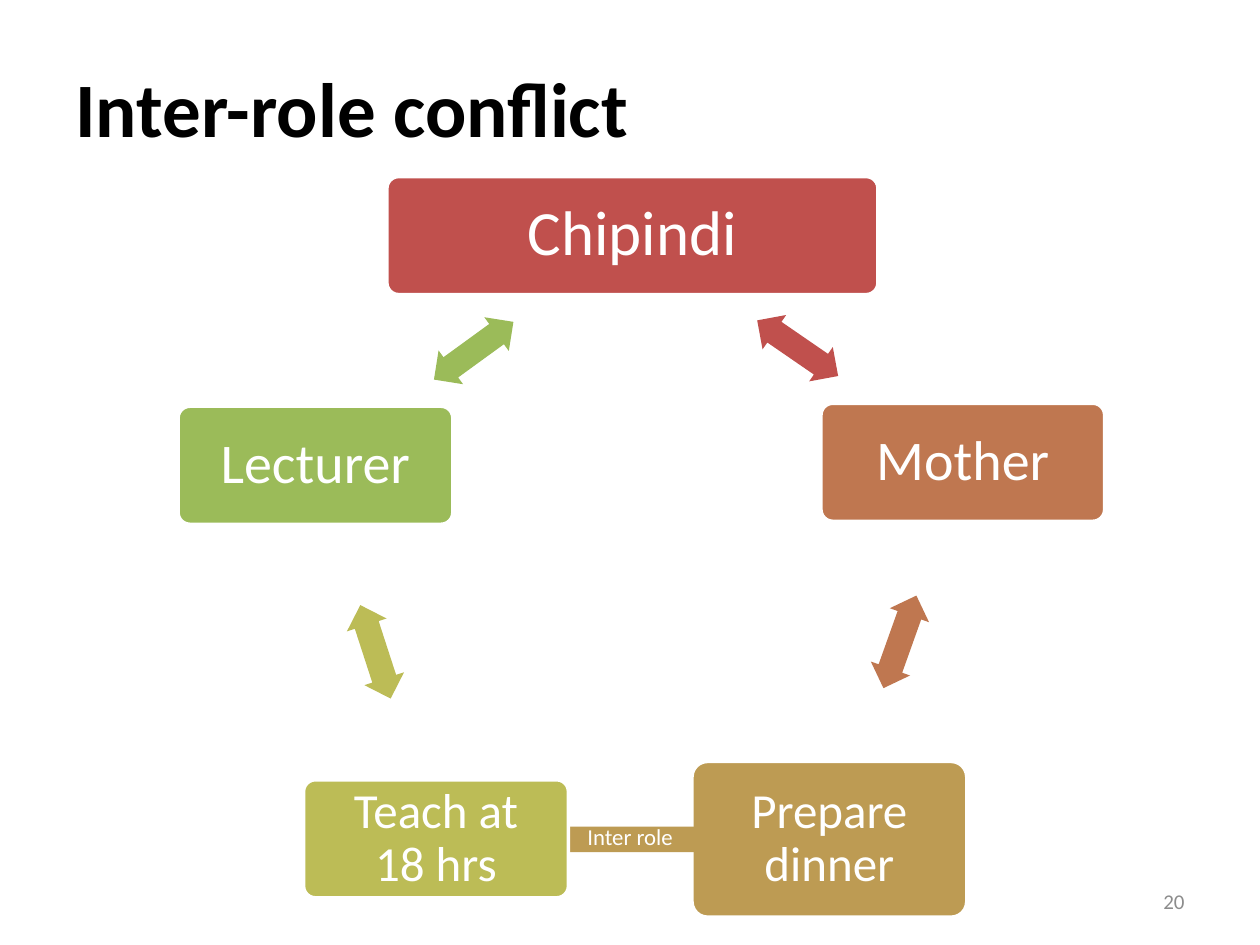
from pptx import Presentation
from pptx.dml.color import RGBColor
from pptx.enum.shapes import MSO_SHAPE
from pptx.enum.text import MSO_ANCHOR, PP_ALIGN
from pptx.util import Cm, Pt

TITLE = "Inter-role conflict"
CONFLICT = "Inter role"
PAGE_NUMBER = "20"

THEME = {
    "font": "Calibri",
    "colors": {
        "red": "C0504D", "rust": "BF7750", "ochre": "BD9B53",
        "olive": "BCBC56", "green": "9BBB59",
        "white": "FFFFFF", "black": "000000", "grey": "8C8C8C",
    },
    "sizes": {"title": 44, "person": 36, "role": 32, "duty": 28,
              "conflict": 13, "number": 12},
    "outline": 2,
}

ROLE_HEIGHT = 2.38
ROLES = [
    ("Chipindi", "person", "red", (7.8, 3.56, 9.9, ROLE_HEIGHT)),
    ("Mother", "role", "rust", (16.55, 8.13, 5.72, ROLE_HEIGHT)),
    ("Prepare dinner", "duty", "ochre", (13.95, 15.35, 5.54, 3.14)),
    ("Teach at 18 hrs", "duty", "olive", (6.12, 15.72, 5.34, ROLE_HEIGHT)),
    ("Lecturer", "role", "green", (3.59, 8.19, 5.54, ROLE_HEIGHT)),
]

SHORT_ARROW = (1.98, 0.84)
LONG_ARROW = (3.94, 0.86)
ARROWS = [
    ("red", (16.08, 7.02), SHORT_ARROW, 34.5),
    ("rust", (18.14, 12.94), SHORT_ARROW, 109.6),
    ("ochre", (12.71, 16.92), LONG_ARROW, 180),
    ("olive", (7.57, 13.14), SHORT_ARROW, 252),
    ("green", (9.55, 7.07), SHORT_ARROW, 324),
]


def color(name):
    return RGBColor.from_string(THEME["colors"][name])


def apply(target, values):
    for name, value in values.items():
        setattr(target, name, value)


def write(box, text, size, ink, align, inset, spacing=None, bold=False):
    frame = box.text_frame
    apply(frame, {
        "word_wrap": True, "vertical_anchor": MSO_ANCHOR.MIDDLE,
        "margin_left": Cm(inset), "margin_right": Cm(inset),
        "margin_top": Cm(min(inset, 0.2)), "margin_bottom": Cm(min(inset, 0.2)),
    })
    para = frame.paragraphs[0]
    apply(para, {"alignment": align, "line_spacing": spacing})
    span = para.add_run()
    span.text = text
    apply(span.font, {"name": THEME["font"], "size": Pt(THEME["sizes"][size]),
                      "bold": bold})
    span.font.color.rgb = color(ink)


def add_filled(page, preset, place, fill, adjustments):
    shape = page.shapes.add_shape(preset, *map(Cm, place))
    shape.shadow.inherit = False
    shape.fill.solid()
    shape.fill.fore_color.rgb = color(fill)
    for index, value in enumerate(adjustments):
        shape.adjustments[index] = value
    return shape


def add_role(page, text, size, fill, place):
    box = add_filled(page, MSO_SHAPE.ROUNDED_RECTANGLE, place, fill, [0.1])
    box.line.color.rgb = color("white")
    box.line.width = Pt(THEME["outline"])
    write(box, text, size, "white", PP_ALIGN.CENTER, 0.38, 0.9)


def add_arrow(page, fill, center, size, rotation):
    place = [middle - length / 2 for middle, length in zip(center, size)]
    arrow = add_filled(page, MSO_SHAPE.LEFT_RIGHT_ARROW, (*place, *size), fill,
                       [0.6, 0.5])
    arrow.line.fill.background()
    arrow.rotation = rotation


def add_label(page, place, *style):
    box = page.shapes.add_textbox(*map(Cm, place))
    write(box, *style)


def main():
    deck = Presentation()
    deck.slide_width, deck.slide_height = Cm(25.4), Cm(19.05)
    page = deck.slides.add_slide(deck.slide_layouts[5])

    title = page.shapes.title
    apply(title, {"left": Cm(1.27), "top": Cm(0.76),
                  "width": Cm(22.86), "height": Cm(2.77)})
    write(title, TITLE, "title", "black", PP_ALIGN.JUSTIFY, 0.25, bold=True)

    for role, arrow in zip(ROLES, ARROWS):
        add_role(page, *role)
        add_arrow(page, *arrow)

    add_label(page, (11, 16.64, 3.4, 0.51), CONFLICT, "conflict", "white",
              PP_ALIGN.CENTER, 0, 0.9)
    add_label(page, (18.21, 17.65, 5.92, 1.02), PAGE_NUMBER, "number", "grey",
              PP_ALIGN.RIGHT, 0.25)
    deck.save("out.pptx")


if __name__ == "__main__":
    main()
